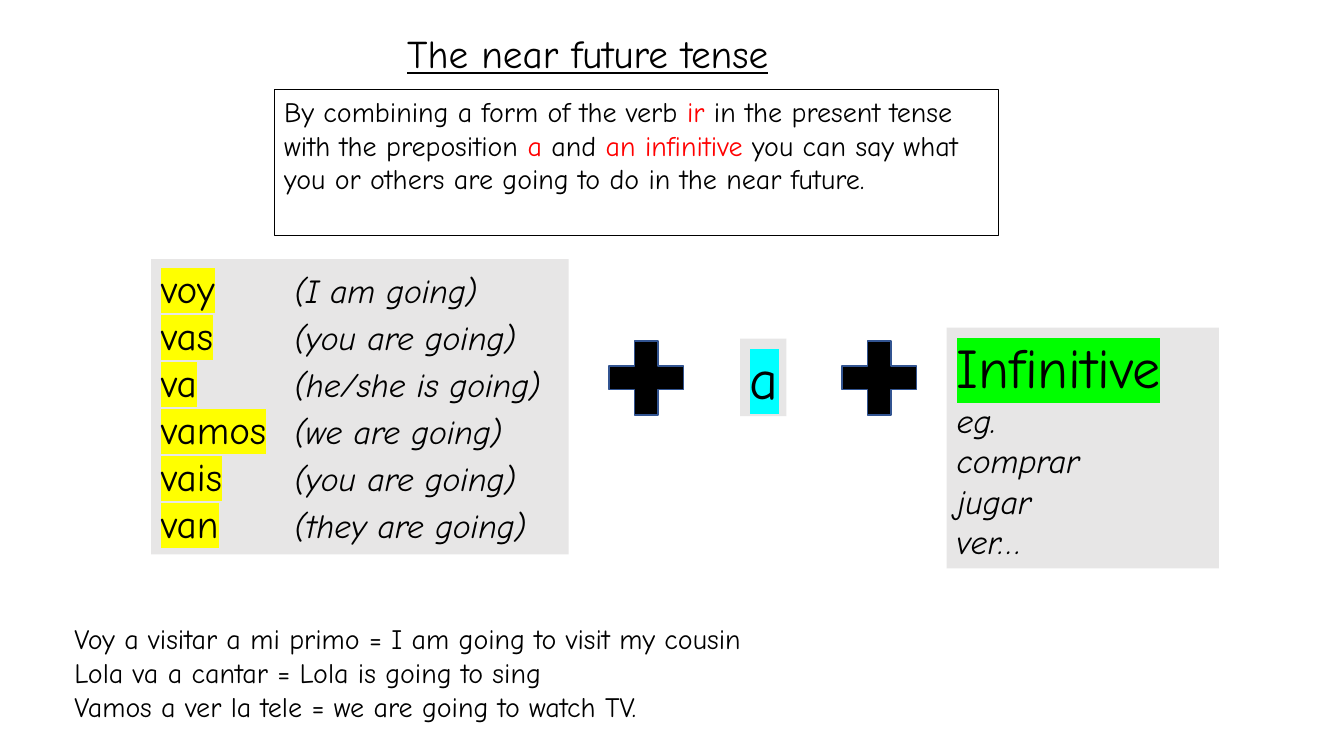
import pptx
import pptx.util
import pptx.dml.color
import pptx.enum.shapes
import pptx.oxml.ns
from lxml import etree

Inches = pptx.util.Inches
Pt = pptx.util.Pt
RGB = pptx.dml.color.RGBColor

BLACK = RGB(0x00, 0x00, 0x00)
RED = RGB(0xFF, 0x00, 0x00)
GREY = RGB(0xE7, 0xE6, 0xE6)
NAVY = RGB(0x32, 0x54, 0x91)
YELLOW = RGB(0xFF, 0xFF, 0x00)
CYAN = RGB(0x00, 0xFF, 0xFF)
GREEN = RGB(0x00, 0xFF, 0x00)
FONT = "Comic Neue"

RULE = [
    ("By combining a form of the verb ", BLACK), ("ir", RED),
    (" in the present tense with the preposition ", BLACK), ("a", RED),
    (" and ", BLACK), ("an infinitive ", RED),
    ("you can say what you or others are going to do in the near future.", BLACK),
]
VERBS = [
    ("voy", "(I am going)"), ("vas", "(you are going)"),
    ("va", "(he/she is going)"), ("vamos", "(we are going)"),
    ("vais", "(you are going)"), ("van", "(they are going)"),
]
SAMPLES = [
    "Voy a visitar a mi primo = I am going to visit my cousin",
    "Lola va a cantar = Lola is going to sing",
    "Vamos a ver la tele = we are going to watch TV.",
]


def add_box(slide, box, fill=None):
    """Add a text box and return it with its text frame."""
    shape = slide.shapes.add_textbox(*map(Inches, box))
    shape.text_frame.word_wrap = True
    if fill is not None:
        shape.fill.solid()
        shape.fill.fore_color.rgb = fill
    return shape, shape.text_frame


def next_para(frame, first):
    return frame.paragraphs[0] if first else frame.add_paragraph()


def set_font(para, size=None, italic=None):
    para.font.name = FONT
    para.font.color.rgb = BLACK
    if size:
        para.font.size = Pt(size)
    if italic:
        para.font.italic = True


def add_run(para, text):
    run = para.add_run()
    run.text = text
    return run


def mark(run, color):
    """Highlight a run."""
    props = run.font._element
    light = etree.SubElement(props, pptx.oxml.ns.qn("a:highlight"))
    etree.SubElement(light, pptx.oxml.ns.qn("a:srgbClr"), val=str(color))


def add_tab(para, stop):
    props = para._p.get_or_add_pPr()
    tabs = etree.SubElement(props, pptx.oxml.ns.qn("a:tabLst"))
    etree.SubElement(tabs, pptx.oxml.ns.qn("a:tab"), pos=str(Inches(stop)), algn="l")


def add_lines(frame, lines, size, italic=None, first=True):
    for i, line in enumerate(lines):
        para = next_para(frame, first and i == 0)
        set_font(para, size, italic)
        add_run(para, line)


def add_title(slide, box):
    frame = add_box(slide, box)[1]
    add_lines(frame, ["The near future tense"], 28)
    frame.paragraphs[0].font.underline = True


def add_rule(slide, box):
    shape, frame = add_box(slide, box)
    shape.line.color.rgb = BLACK
    shape.line.width = Pt(0.75)
    para = frame.paragraphs[0]
    para.font.name = FONT
    para.font.size = Pt(20)
    for text, color in RULE:
        add_run(para, text).font.color.rgb = color


def add_verbs(slide, box):
    frame = add_box(slide, box, GREY)[1]
    for i, (verb, sense) in enumerate(VERBS):
        para = next_para(frame, i == 0)
        add_tab(para, 1.32)
        set_font(para)
        run = add_run(para, verb)
        run.font.size = Pt(28)
        mark(run, YELLOW)
        add_run(para, "\t").font.size = Pt(28)
        run = add_run(para, sense)
        run.font.size = Pt(24)
        run.font.italic = True


def add_plus(slide, box):
    kind = pptx.enum.shapes.MSO_SHAPE.MATH_PLUS
    plus = slide.shapes.add_shape(kind, *map(Inches, box))
    plus.shadow.inherit = False
    plus.fill.solid()
    plus.fill.fore_color.rgb = BLACK
    plus.line.color.rgb = NAVY
    plus.line.width = Pt(1)


def add_term(slide, box, term, color, cases=()):
    """Grey box with a large marked term and optional examples."""
    frame = add_box(slide, box, GREY)[1]
    add_lines(frame, [term], 40)
    mark(frame.paragraphs[0].runs[0], color)
    add_lines(frame, cases, 24, italic=True, first=False)


def add_samples(slide, box):
    add_lines(add_box(slide, box)[1], SAMPLES, 20)


def main():
    deck = pptx.Presentation()
    deck.slide_width = Inches(13.33)
    deck.slide_height = Inches(7.5)
    slide = deck.slides.add_slide(deck.slide_layouts[6])

    # Title and rule
    add_title(slide, (3.94, 0.24, 4.28, 0.57))
    add_rule(slide, (2.72, 0.89, 7.18, 1.45))

    # Formula: verb + a + infinitive
    add_verbs(slide, (1.5, 2.57, 4.14, 2.93))
    for left in (5.91, 8.22):
        add_plus(slide, (left, 3.25, 1, 1))
    add_term(slide, (7.34, 3.36, 0.46, 0.77), "a", CYAN)
    add_term(slide, (9.39, 3.25, 2.7, 2.39), "Infinitive", GREEN,
             ("eg.", "comprar", "jugar", "ver…"))

    # Example sentences
    add_samples(slide, (0.64, 6.12, 7.26, 1.11))
    deck.save("out.pptx")


if __name__ == "__main__":
    main()
